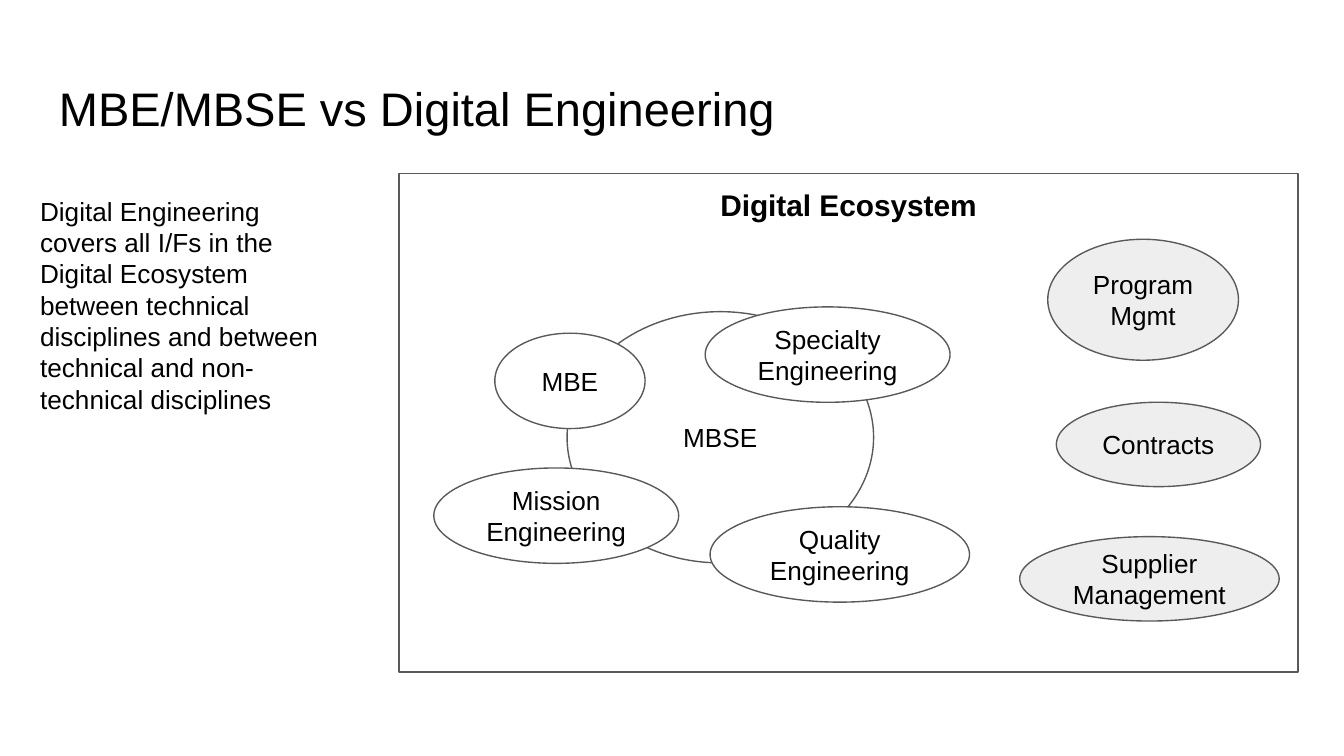
import pptx
import pptx.util
import pptx.dml.color
import pptx.enum.shapes
import pptx.enum.text
from dataclasses import dataclass

Pt = pptx.util.Pt
RGB = pptx.dml.color.RGBColor
Kind = pptx.enum.shapes.MSO_SHAPE
Align = pptx.enum.text.PP_ALIGN
Anchor = pptx.enum.text.MSO_ANCHOR


@dataclass
class Theme:
    font: str = "Arial"
    ink: RGB = RGB(0, 0, 0)
    edge: RGB = RGB(0x59, 0x59, 0x59)
    white: RGB = RGB(0xFF, 0xFF, 0xFF)
    grey: RGB = RGB(0xEE, 0xEE, 0xEE)
    title: float = 25.2
    head: float = 16
    body: float = 14


theme = Theme()


def write(shape, text, size=theme.body, bold=False, align=Align.LEFT, anchor=Anchor.TOP):
    frame = shape.text_frame
    frame.word_wrap = True
    frame.vertical_anchor = anchor
    frame.margin_left = frame.margin_right = Pt(7.2)
    frame.margin_top = frame.margin_bottom = Pt(7.2)
    frame.text = text
    for para in frame.paragraphs:
        para.alignment = align
        para.font.name = theme.font
        para.font.size = Pt(size)
        para.font.bold = bold
        para.font.color.rgb = theme.ink


def draw(kind, box, fill=None):
    shape = slide.shapes.add_shape(kind, *map(Pt, box))
    shape.shadow.inherit = False
    if fill is None:
        shape.fill.background()
    else:
        shape.fill.solid()
        shape.fill.fore_color.rgb = fill
    shape.line.color.rgb = theme.edge
    shape.line.width = Pt(0.75)
    return shape


deck = pptx.Presentation()
deck.slide_width, deck.slide_height = Pt(720), Pt(405)
slide = deck.slides.add_slide(deck.slide_layouts[6])

# Ecosystem frame
frame = draw(Kind.RECTANGLE, (213.8, 92.9, 481.7, 267.1))
write(frame, "Digital Ecosystem", size=theme.head, bold=True, align=Align.CENTER)

# Title
title = slide.shapes.add_textbox(Pt(24.5), Pt(35.3), Pt(671), Pt(45.4))
write(title, "MBE/MBSE vs Digital Engineering", size=theme.title)

# Disciplines: the MBSE ring, the non-technical ones, then those on the ring
ovals = [
    ("MBSE", (303.8, 167, 164.2, 134.6), None),
    ("Program\nMgmt", (561.3, 128.2, 102.2, 64.8), theme.grey),
    ("Contracts", (565.9, 215.5, 109.4, 45.2), theme.grey),
    ("Supplier\nManagement", (546.3, 287.5, 139, 45.2), theme.grey),
    ("MBE", (265.1, 178.5, 80.5, 51.1), theme.white),
    ("Quality\nEngineering", (380.4, 271.5, 139, 51.1), theme.white),
    ("Mission\nEngineering", (232.4, 250.7, 131.2, 51.1), theme.white),
    ("Specialty\nEngineering", (377.8, 164.4, 131.2, 51.1), theme.white),
]
for name, box, fill in ovals:
    oval = draw(Kind.OVAL, box, fill)
    write(oval, name, align=Align.CENTER, anchor=Anchor.MIDDLE)

# Side note
note = slide.shapes.add_textbox(Pt(14.4), Pt(97.2), Pt(172), Pt(131))
write(note, "Digital Engineering covers all I/Fs in the Digital Ecosystem between "
            "technical disciplines and between technical and non-technical disciplines")
note.text_frame.auto_size = pptx.enum.text.MSO_AUTO_SIZE.SHAPE_TO_FIT_TEXT

deck.save("out.pptx")
